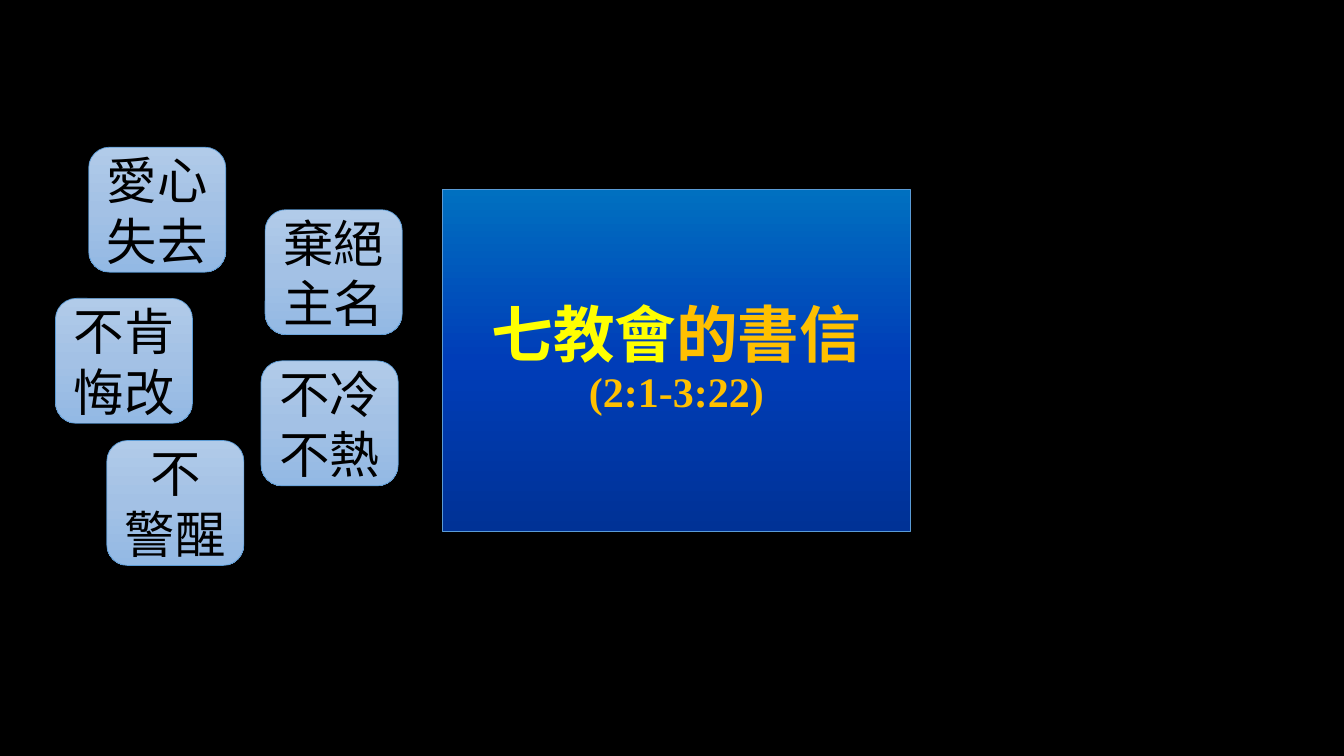
from copy import deepcopy

from pptx import Presentation
from pptx import util as u
from pptx.dml.color import RGBColor
from pptx.enum import shapes, text


def rgb(value):
    return RGBColor.from_string(value)


class Deck:
    FONT = "Calibri"
    EDGE = "5B9BD5"
    TITLE_FILL = ("0070C0", "003DB8", "003296")
    CARD_FILL = ("B1CBE9", "A3C1E5", "93B9E4")
    CARD_SIZE = (10.2, 16.53)

    def __init__(self, width, height):
        self.prs = Presentation()
        self.prs.slide_width = u.Inches(width)
        self.prs.slide_height = u.Inches(height)
        self.slide = self.prs.slides.add_slide(self.prs.slide_layouts[5])
        fill = self.slide.background.fill
        fill.solid()
        fill.fore_color.rgb = rgb("000000")

    def box(self, left, top, width, height):
        col = self.prs.slide_width / 100
        row = self.prs.slide_height / 100
        return [u.Emu(round(n)) for n in (left * col, top * row, width * col, height * row)]

    def paint(self, sp, colors):
        sp.fill.gradient()
        sp.fill.gradient_angle = 270
        stops = sp._element.spPr.find(".//{*}gsLst")
        stops.append(deepcopy(stops[0]))
        for i, (stop, color) in enumerate(zip(sp.fill.gradient_stops, colors)):
            stop.position = i / 2
            stop.color.rgb = rgb(color)
        sp.line.color.rgb = rgb(self.EDGE)
        sp.line.width = u.Pt(0.5)

    def add_lines(self, sp, lines, spacing=1.0):
        tf = sp.text_frame
        tf.word_wrap = True
        tf.auto_size = text.MSO_AUTO_SIZE.NONE
        tf.vertical_anchor = text.MSO_ANCHOR.MIDDLE
        p = tf.paragraphs[0]
        p.alignment = text.PP_ALIGN.CENTER
        p.line_spacing = spacing
        for i, runs in enumerate(lines):
            if i:
                p.add_line_break()
            for words, size, color, bold, font in runs:
                r = p.add_run()
                r.text = words
                r.font.size = u.Pt(size)
                r.font.bold = bold
                r.font.name = font
                r.font.color.rgb = rgb(color)

    def title(self, left, top, width, height, lines):
        sp = self.slide.shapes.title
        sp.left, sp.top, sp.width, sp.height = self.box(left, top, width, height)
        self.paint(sp, self.TITLE_FILL)
        self.add_lines(sp, lines, 0.9)

    def card(self, left, top, lines):
        sp = self.slide.shapes.add_shape(
            shapes.MSO_SHAPE.ROUNDED_RECTANGLE, *self.box(left, top, *self.CARD_SIZE))
        sp.shadow.inherit = False
        self.paint(sp, self.CARD_FILL)
        self.add_lines(sp, [[(line, 36, "000000", False, self.FONT)] for line in lines])


def main():
    deck = Deck(13.333, 7.5)
    deck.title(32.93, 25.07, 34.8, 45.2, [
        [("七教會", 44, "FFFF00", True, deck.FONT), ("的書信", 44, "FFC000", True, deck.FONT)],
        [("(2:1-3:22)", 30, "FFC000", True, "Times New Roman")],
    ])
    for left, top, lines in (
        (6.6, 19.47, ["愛心失去"]),
        (19.73, 27.73, ["棄絕主名"]),
        (4.13, 39.47, ["不肯悔改"]),
        (7.95, 58.27, ["不", "警醒"]),
        (19.43, 47.73, ["不冷", "不熱"]),
    ):
        deck.card(left, top, lines)
    deck.prs.save("out.pptx")


if __name__ == "__main__":
    main()
